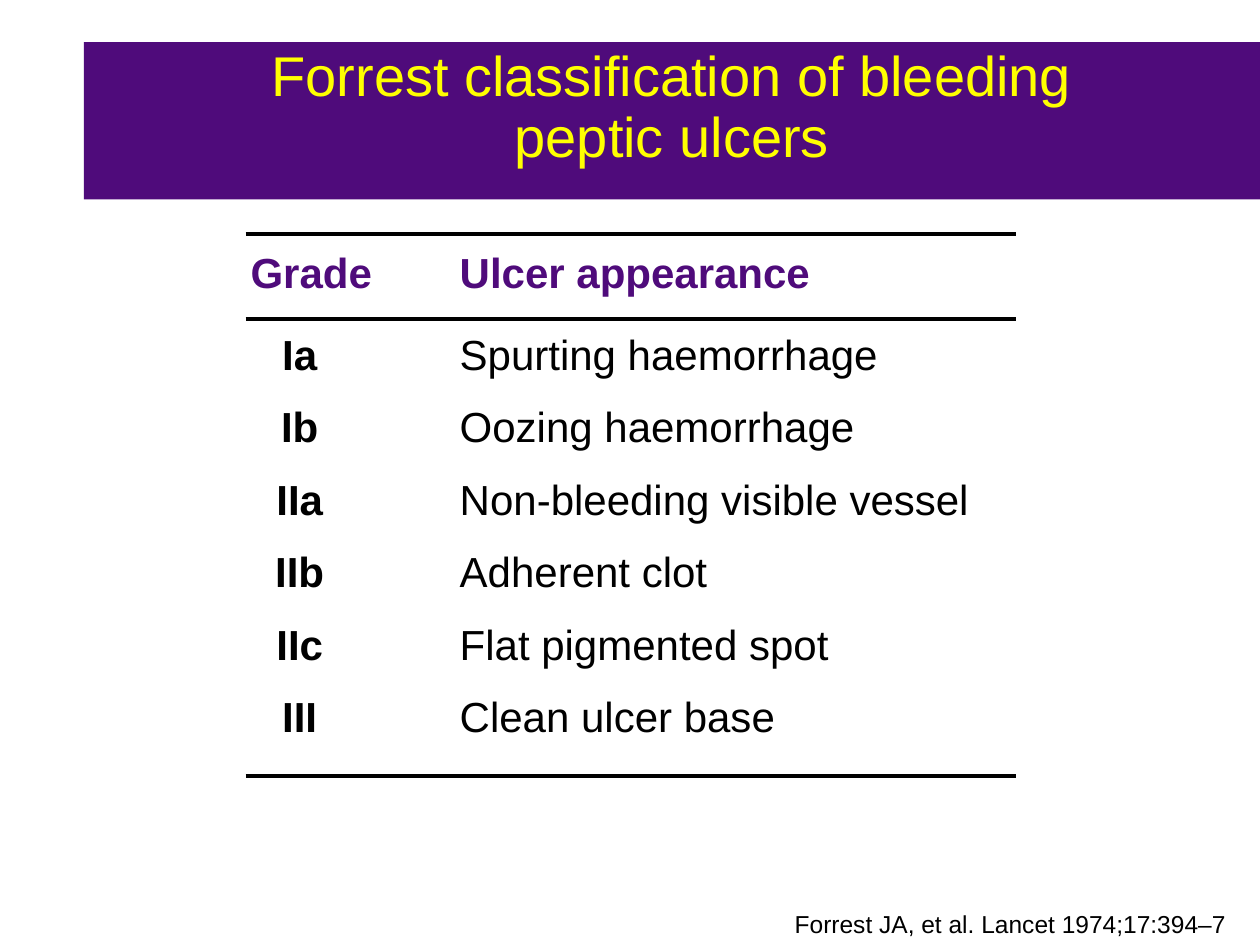
from dataclasses import dataclass
from pptx import Presentation
from pptx.dml.color import RGBColor as Rgb
from pptx.enum.shapes import MSO_CONNECTOR as Line
from pptx.enum.text import MSO_ANCHOR as Anchor, MSO_AUTO_SIZE as Auto, PP_ALIGN as Align
from pptx.oxml.ns import qn
from pptx.util import Inches, Pt
from lxml.etree import SubElement as Sub

WIDE, HIGH = 10, 7.5
TABS = ((0.39, "ctr"), (1.66, "l"))
LEFT, SPAN = 1.89, 5.91
RULES = (1.86, 2.53, 6.16)
HEAD = ("Grade", "Ulcer appearance")
GRADES = (
    ("Ia", "Spurting haemorrhage"),
    ("Ib", "Oozing haemorrhage"),
    ("IIa", "Non-bleeding visible vessel"),
    ("IIb", "Adherent clot"),
    ("IIc", "Flat pigmented spot"),
    ("III", "Clean ulcer base"),
)


@dataclass(frozen=True)
class Theme:
    """Hold the colours, type sizes and spacing."""
    font: str = "Arial"
    band: Rgb = Rgb(0x4F, 0x0B, 0x7B)
    title: Rgb = Rgb(0xFF, 0xFF, 0x00)
    ink: Rgb = Rgb(0, 0, 0)
    big: int = 32
    text: int = 24
    small: int = 14
    rule: float = 2.25
    lead: float = 0.9
    gap: float = 15.5


THEME = Theme()


def style(font, size, color, bold=False):
    """Set the face, size, colour and weight of a font."""
    font.name, font.size, font.bold = THEME.font, Pt(size), bold
    font.color.rgb = color


def place(shape, left, top, width, height):
    """Move and size a shape in inches."""
    shape.left, shape.top = Inches(left), Inches(top)
    shape.width, shape.height = Inches(width), Inches(height)


def add_title(slide, text):
    """Fill the title placeholder and draw it as a band."""
    shape = slide.shapes.title
    place(shape, WIDE / 15, HIGH / 22.5, WIDE * 14 / 15, HIGH / 6)
    shape.fill.solid()
    shape.fill.fore_color.rgb = THEME.band
    frame = shape.text_frame
    frame.text = text
    frame.auto_size, frame.vertical_anchor = Auto.NONE, Anchor.TOP
    para = frame.paragraphs[0]
    para.alignment, para.line_spacing = Align.CENTER, THEME.lead
    for run in para.runs:
        style(run.font, THEME.big, THEME.title)


def add_box(slide, left, top, width, height):
    """Add a wrapping text box and return its frame."""
    frame = slide.shapes.add_textbox(*map(Inches, (left, top, width, height))).text_frame
    frame.word_wrap = True
    return frame


def add_tabs(para):
    """Give a paragraph the tab stops of the two columns."""
    stops = Sub(para._p.get_or_add_pPr(), qn("a:tabLst"))
    for pos, kind in TABS:
        Sub(stops, qn("a:tab"), pos=str(Inches(pos)), algn=kind)


def add_rows(slide, top, height, rows, color, bold):
    """Write grade and appearance pairs on tab stops."""
    frame = add_box(slide, LEFT, top, SPAN, height)
    for i, (grade, look) in enumerate(rows):
        para = frame.paragraphs[0] if i == 0 else frame.add_paragraph()
        add_tabs(para)
        para.line_spacing, para.space_after = THEME.lead, Pt(THEME.gap)
        for text, heavy in ((f"\t{grade}", True), (f"\t{look}", bold)):
            run = para.add_run()
            run.text = text
            style(run.font, THEME.text, color, heavy)


def add_rule(slide, y):
    """Draw one horizontal rule of the table."""
    ends = map(Inches, (1.95, y, 8.06, y))
    rule = slide.shapes.add_connector(Line.STRAIGHT, *ends)
    rule.line.color.rgb, rule.line.width = THEME.ink, Pt(THEME.rule)
    Sub(rule._element.spPr, qn("a:effectLst"))


def add_source(slide, text):
    """Write the citation at the bottom right."""
    frame = add_box(slide, 0.34, 7.19, 9.49, 0.31)
    frame.text = text
    frame.vertical_anchor = Anchor.BOTTOM
    para = frame.paragraphs[0]
    para.alignment, para.line_spacing = Align.RIGHT, THEME.lead
    style(para.runs[0].font, THEME.small, THEME.ink)


def main():
    """Build and save the slide."""
    deck = Presentation()
    deck.slide_width, deck.slide_height = Inches(WIDE), Inches(HIGH)
    slide = deck.slides.add_slide(deck.slide_layouts[5])
    add_title(slide, "Forrest classification of bleeding\vpeptic ulcers")
    add_rows(slide, 1.95, 0.46, [HEAD], THEME.band, True)
    for y in RULES:
        add_rule(slide, y)
    add_rows(slide, 2.6, 3.45, GRADES, THEME.ink, False)
    add_source(slide, "Forrest JA, et al. Lancet 1974;17:394–7")
    deck.save("out.pptx")


if __name__ == "__main__":
    main()
